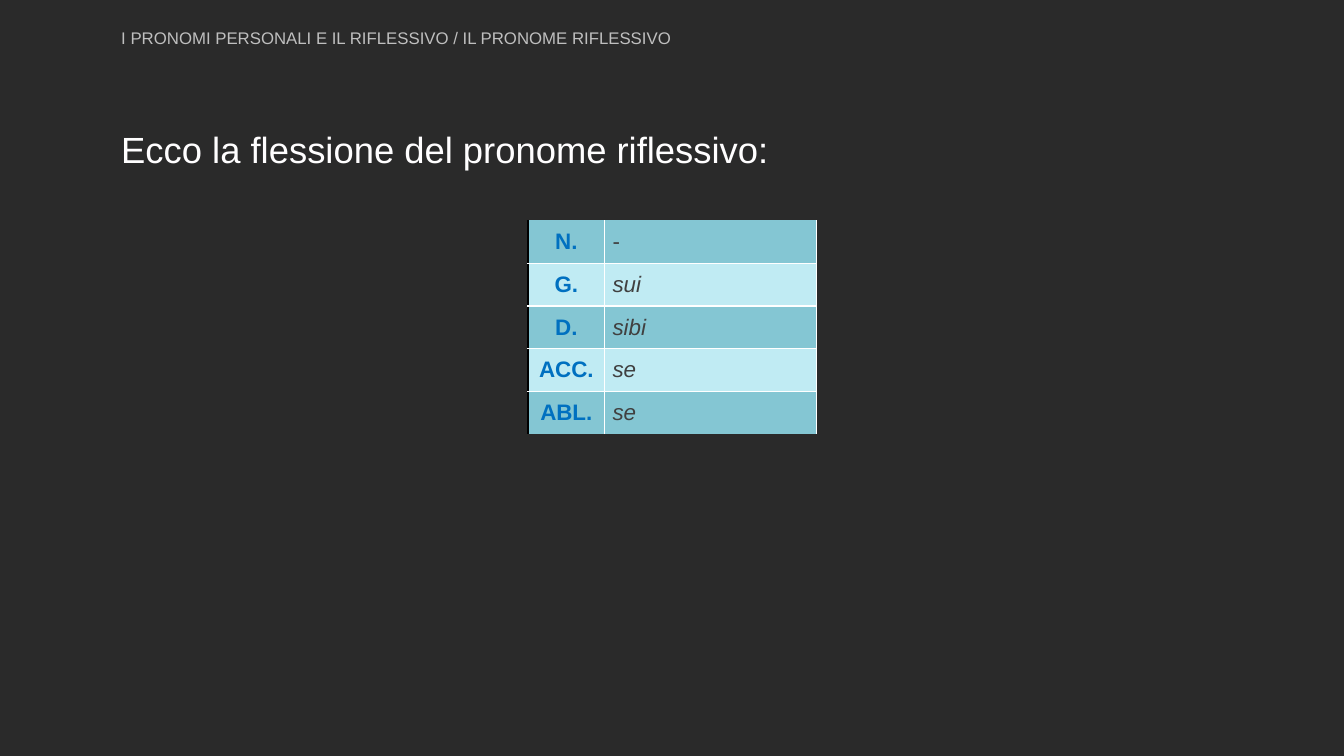
from lxml.etree import SubElement as Sub
from pptx import Presentation
from pptx.dml.color import RGBColor as Rgb
from pptx.enum.text import MSO_ANCHOR as Anchor, PP_ALIGN as Align
from pptx.oxml.ns import qn
from pptx.util import Pt

HUES = {
    "back": "2A2A2A", "lead": "FFFEFF", "crumb": "BFBFBF",
    "case": "0070C0", "form": "404040", "dark": "84C6D3",
    "light": "C0EBF3", "rule": "FFFFFF", "edge": "000000",
}
CASES = [("N.", "-"), ("G.", "sui"), ("D.", "sibi"), ("ACC.", "se"), ("ABL.", "se")]
WIDTHS = (54.9, 151.2)
ROW = 30.57


def hue(name):
    return Rgb.from_string(HUES[name])


def style(para, size, color, bold=False, italic=False):
    font = para.font
    font.name, font.size = "Arial", Pt(size)
    font.bold, font.italic = bold, italic
    font.color.rgb = hue(color)


def inset(item, gap):
    item.margin_left = item.margin_right = Pt(gap)
    item.margin_top = item.margin_bottom = Pt(gap)


def fill_holder(holder, box, text, size, color, anchor, space):
    holder.left, holder.top, holder.width, holder.height = map(Pt, box)
    frame = holder.text_frame
    frame.text = text
    frame.word_wrap = True
    frame.vertical_anchor = anchor
    inset(frame, 3.6)
    para = frame.paragraphs[0]
    para.alignment = Align.LEFT
    para.line_spacing = space
    para.space_before = Pt(0)
    props = para._p.get_or_add_pPr()
    props.set("marL", "0")
    props.set("indent", "0")
    Sub(props, qn("a:buNone"))
    style(para, size, color)


def add_rules(cell, sides):
    props = cell._tc.get_or_add_tcPr()
    for side, color in sides.items():
        line = Sub(props, qn(f"a:ln{side}"), w=str(Pt(1)))
        if color:
            solid = Sub(line, qn("a:solidFill"))
            Sub(solid, qn("a:srgbClr"), val=HUES[color])
        else:
            Sub(line, qn("a:noFill"))


def set_cell(cell, text, row, col):
    add_rules(cell, {
        "L": "rule" if col else "edge",
        "R": "rule",
        "T": "rule" if row else None,
        "B": "rule" if row < len(CASES) - 1 else None,
    })
    cell.fill.solid()
    cell.fill.fore_color.rgb = hue("light" if row % 2 else "dark")
    cell.vertical_anchor = Anchor.MIDDLE
    inset(cell, 5.6)
    cell.text = text
    para = cell.text_frame.paragraphs[0]
    para.alignment = Align.LEFT if col else Align.CENTER
    if col:
        style(para, 16, "form", italic=row > 0)
    else:
        style(para, 16, "case", bold=True)


def add_grid(slide):
    frame = slide.shapes.add_table(
        len(CASES), 2, Pt(377.1), Pt(157.4), Pt(sum(WIDTHS)), Pt(ROW * len(CASES)))
    table = frame.table
    table.first_row = table.horz_banding = False
    for col, width in enumerate(WIDTHS):
        table.columns[col].width = Pt(width)
    for row, texts in enumerate(CASES):
        table.rows[row].height = Pt(ROW)
        for col, text in enumerate(texts):
            set_cell(table.cell(row, col), text, row, col)


def main():
    deck = Presentation()
    deck.slide_width, deck.slide_height = Pt(960), Pt(540)
    slide = deck.slides.add_slide(deck.slide_layouts[1])
    slide.background.fill.solid()
    slide.background.fill.fore_color.rgb = hue("back")
    fill_holder(slide.shapes.title, (83, 16, 510.5, 21.6),
                "I PRONOMI PERSONALI E IL RIFLESSIVO / IL PRONOME RIFLESSIVO",
                12, "crumb", Anchor.MIDDLE, 1.0)
    fill_holder(slide.placeholders[1], (83, 71.3, 793.4, 52.6),
                "Ecco la flessione del pronome riflessivo:",
                26, "lead", Anchor.TOP, 1.5)
    add_grid(slide)
    deck.save("out.pptx")


if __name__ == "__main__":
    main()
